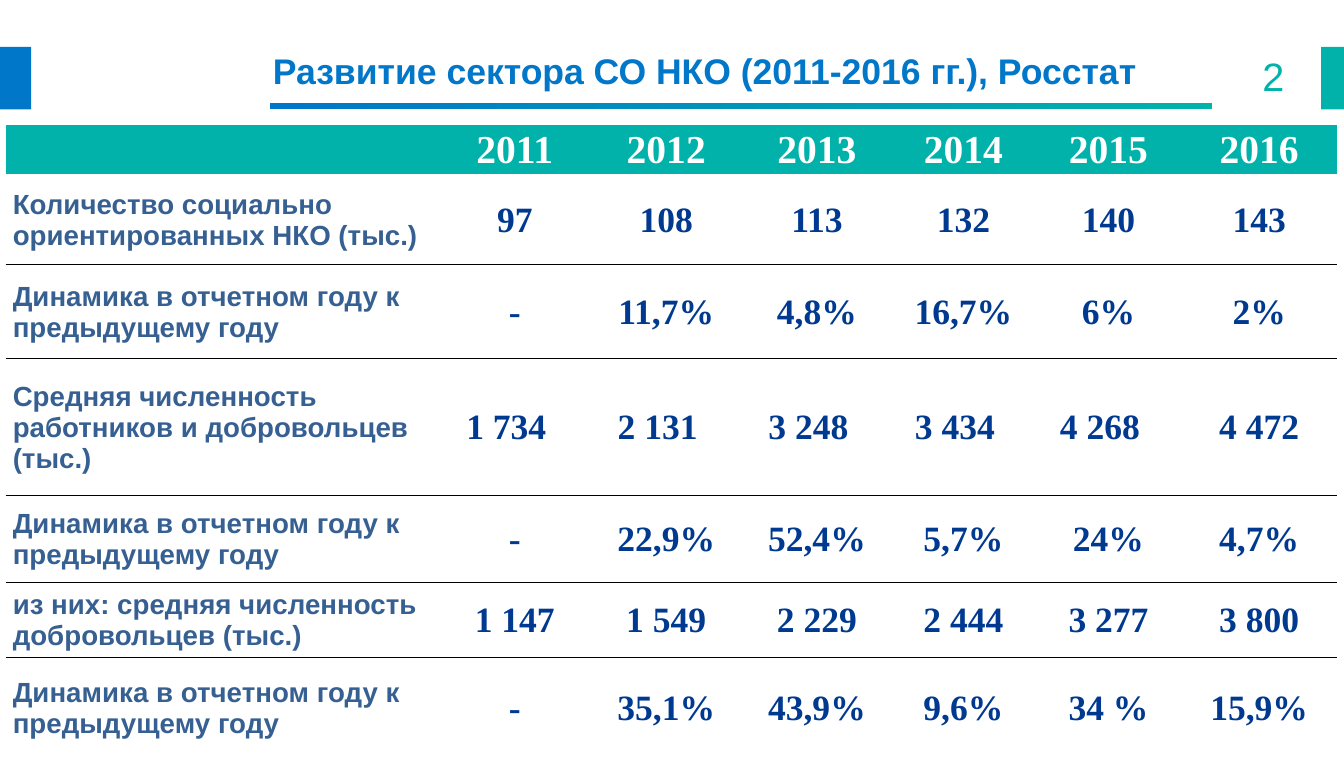
from dataclasses import dataclass

from lxml import etree
from pptx import Presentation
from pptx.dml.color import RGBColor
from pptx.enum.shapes import MSO_SHAPE
from pptx.enum.text import MSO_ANCHOR, PP_ALIGN
from pptx.oxml.ns import qn
from pptx.util import Inches, Pt

RECT = MSO_SHAPE.RECTANGLE
MIDDLE = MSO_ANCHOR.MIDDLE
LEFT, CENTER, RIGHT = PP_ALIGN.LEFT, PP_ALIGN.CENTER, PP_ALIGN.RIGHT
WIDE, HIGH = Inches(9.45), Inches(5.32)
PLAIN = "{2D5ABB26-0587-4C30-8999-92F81FD0307C}"


@dataclass(frozen=True)
class Theme:
    """Colours, fonts and type sizes of the slide."""
    blue: str = "0077C8"
    teal: str = "00B2A9"
    white: str = "FFFFFF"
    label: str = "376092"
    value: str = "003990"
    line: str = "000000"
    sans: str = "Arial"
    serif: str = "Times New Roman"
    large: int = 20
    normal: int = 18
    small: int = 14


THEME = Theme()
COLS = [3.05, 1.06, 1.07, 1.05, 1.01, 1.03, 1.09]
ROWS = [0.32, 0.64, 0.66, 0.96, 0.61, 0.53, 0.71]
TREND = "Динамика в отчетном году к предыдущему году"
DATA = [
    ["", "2011", "2012", "2013", "2014", "2015", "2016"],
    ["Количество социально ориентированных НКО (тыс.)",
     "97", "108", "113", "132", "140", "143"],
    [TREND, "-", "11,7%", "4,8%", "16,7%", "6%", "2%"],
    ["Средняя численность работников и добровольцев (тыс.)",
     "1 734", "2 131", "3 248", "3 434", "4 268", "4 472"],
    [TREND, "-", "22,9%", "52,4%", "5,7%", "24%", "4,7%"],
    ["из них: средняя численность добровольцев (тыс.)",
     "1 147", "1 549", "2 229", "2 444", "3 277", "3 800"],
    [TREND, "-", "35,1%", "43,9%", "9,6%", "34 %", "15,9%"],
]
STAFF = 3


def area(left, top, width, height):
    """Turn percentages of the slide into lengths."""
    return (int(WIDE * left / 100), int(HIGH * top / 100),
            int(WIDE * width / 100), int(HIGH * height / 100))


def style(para, font, size, color, bold=True, align=LEFT):
    """Format a paragraph."""
    para.alignment = align
    para.font.name = font
    para.font.size = Pt(size)
    para.font.bold = bold
    para.font.color.rgb = RGBColor.from_string(color)


def bar(slide, place, first, last=None):
    """Add a bar, with a gradient when two colours are given."""
    shape = slide.shapes.add_shape(RECT, *area(*place))
    shape.shadow.inherit = False
    shape.line.fill.background()
    if last is None:
        shape.fill.solid()
        shape.fill.fore_color.rgb = RGBColor.from_string(first)
        return
    shape.fill.gradient()
    shape.fill.gradient_angle = 0
    for stop, color in zip(shape.fill.gradient_stops, (first, last)):
        stop.color.rgb = RGBColor.from_string(color)


def write(shape, place, text, **look):
    """Place a text shape without insets and fill it."""
    shape.left, shape.top, shape.width, shape.height = area(*place)
    frame = shape.text_frame
    frame.margin_left = frame.margin_right = 0
    frame.margin_top = frame.margin_bottom = 0
    frame.word_wrap = True
    frame.vertical_anchor = MIDDLE
    frame.text = text
    style(frame.paragraphs[0], **look)


def rule(cell):
    """Draw a thin line under a cell."""
    line = etree.Element(qn("a:lnB"), w=str(Pt(0.5)))
    fill = etree.SubElement(line, qn("a:solidFill"))
    etree.SubElement(fill, qn("a:srgbClr"), val=THEME.line)
    cell._tc.get_or_add_tcPr().insert(0, line)


def fill_cell(cell, text, row, col):
    """Write and format one table cell."""
    cell.text = text
    cell.vertical_anchor = MIDDLE
    cell.margin_left = Inches(0.01 if col else 0.05)
    shift = row == STAFF and 0 < col < len(COLS) - 1
    cell.margin_right = Inches(0.13 if shift else 0.01)
    cell.margin_top, cell.margin_bottom = Inches(0.01), 0
    para = cell.text_frame.paragraphs[0]
    if row == 0:
        cell.fill.solid()
        cell.fill.fore_color.rgb = RGBColor.from_string(THEME.teal)
        style(para, THEME.serif, THEME.large, THEME.white, align=CENTER)
        return
    cell.fill.background()
    rule(cell)
    if col:
        style(para, THEME.serif, THEME.normal, THEME.value, align=CENTER)
    else:
        style(para, THEME.sans, THEME.small, THEME.label)


def grid(slide, left, top):
    """Add the table of yearly figures."""
    place = area(left, top, 99.2, 83.3)
    table = slide.shapes.add_table(len(ROWS), len(COLS), *place).table
    table.horz_banding = False
    table._tbl.tblPr.find(qn("a:tableStyleId")).text = PLAIN
    for col, width in zip(table.columns, COLS):
        col.width = Inches(width)
    for row, height in zip(table.rows, ROWS):
        row.height = Inches(height)
    for row, texts in enumerate(DATA):
        for col, text in enumerate(texts):
            fill_cell(table.cell(row, col), text, row, col)


def main():
    """Build and save the slide."""
    deck = Presentation()
    deck.slide_width, deck.slide_height = WIDE, HIGH
    slide = deck.slides.add_slide(deck.slide_layouts[5])
    bar(slide, (0, 6.2, 2.33, 8.27), THEME.blue)
    bar(slide, (98.3, 6.2, 1.7, 8.27), THEME.teal)
    bar(slide, (20.11, 13.6, 70.05, 0.75), THEME.blue, THEME.teal)
    write(slide.shapes.title, (20.3, 6, 73, 6.6),
          "Развитие сектора СО НКО (2011-2016 гг.), Росстат",
          font=THEME.sans, size=THEME.normal, color=THEME.blue)
    place = (90.9, 7.4, 4.66, 5.26)
    number = slide.shapes.add_textbox(*area(*place))
    write(number, place, "2", font=THEME.sans, size=THEME.large,
          color=THEME.teal, bold=False, align=RIGHT)
    grid(slide, 0.42, 16.5)
    deck.save("out.pptx")


if __name__ == "__main__":
    main()
